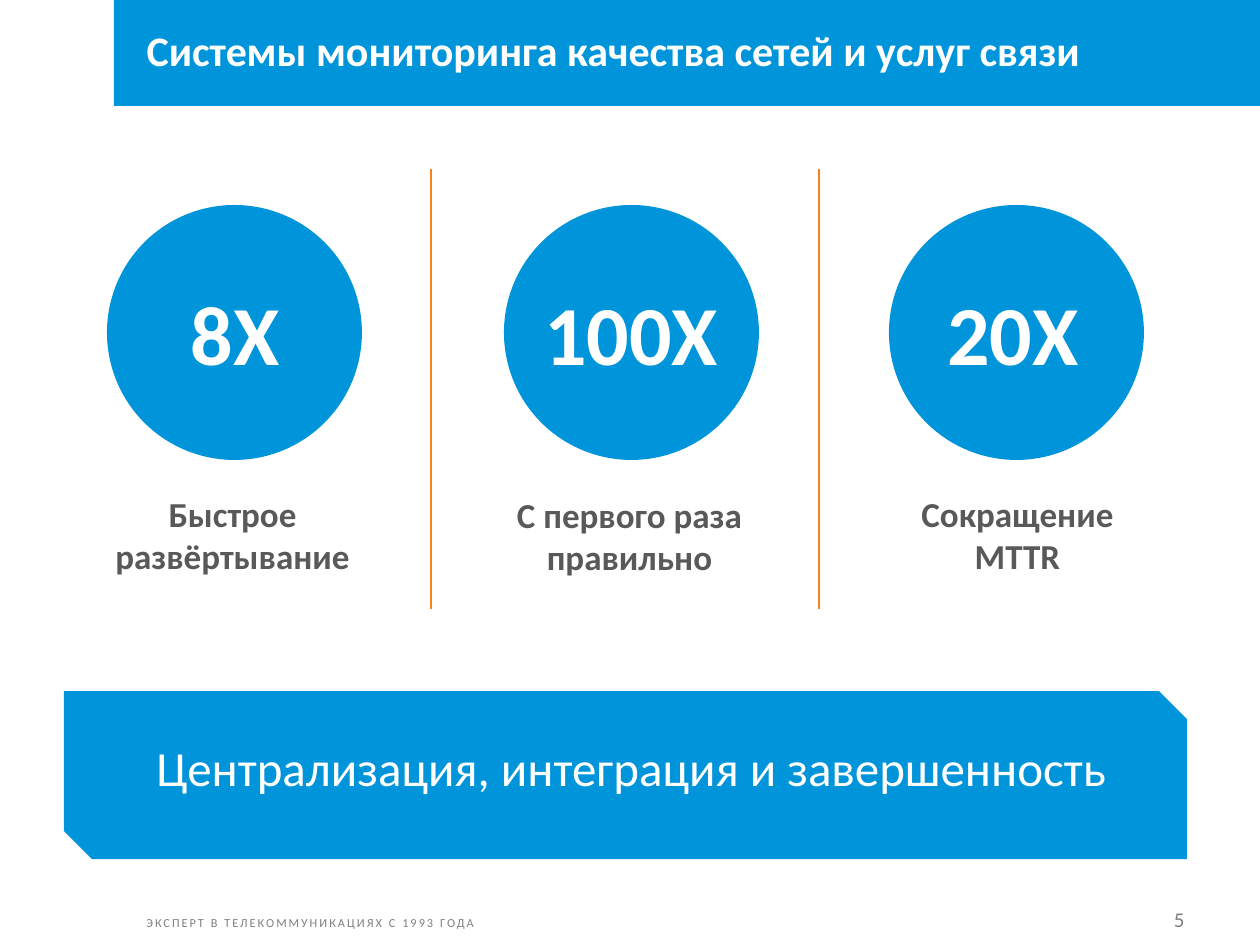
from lxml.etree import SubElement
from pptx import Presentation
from pptx.dml.color import RGBColor
from pptx.enum.shapes import MSO_CONNECTOR, MSO_SHAPE
from pptx.enum.text import MSO_ANCHOR, PP_ALIGN
from pptx.oxml.ns import qn
from pptx.util import Emu, Pt

BLUE, ORANGE, WHITE, GREY, DARK = "0095DA", "F5821E", "FFFFFF", "808080", "595959"


def px(n):
    return Emu(round(n * 914400 / 126))


def rgb(value):
    return RGBColor.from_string(value)


class Deck:
    """Holds the style and the current slide, with a method for each element."""

    font = "Calibri"

    def __init__(self, width, height):
        self.prs = Presentation()
        self.prs.slide_width, self.prs.slide_height = px(width), px(height)

    def add_slide(self):
        self.s = self.prs.slides.add_slide(self.prs.slide_layouts[5])

    def set_text(self, sp, text, size, color, bold=False, align=PP_ALIGN.LEFT,
                 anchor=MSO_ANCHOR.TOP, spacing=None):
        tf = sp.text_frame
        tf.word_wrap = True
        tf.vertical_anchor = anchor
        p = tf.paragraphs[0]
        p.text = text
        p.alignment = align
        for r in p.runs:
            for name, value in dict(name=self.font, size=Pt(size), bold=bold).items():
                setattr(r.font, name, value)
            r.font.color.rgb = rgb(color)
            if spacing:
                r.font._element.set("spc", str(spacing))

    def title(self, box, text, size, color):
        sp = self.s.shapes.title
        for name, value in zip(("left", "top", "width", "height"), box):
            setattr(sp, name, px(value))
        self.set_text(sp, text, size, color, bold=True)
        self.s.shapes.element.append(sp.element)

    def text(self, box, text, size, color, **style):
        sp = self.s.shapes.add_textbox(*map(px, box))
        self.set_text(sp, text, size, color, **style)

    def shape(self, kind, box, color):
        sp = self.s.shapes.add_shape(kind, *map(px, box))
        sp.shadow.inherit = False
        sp.fill.solid()
        sp.fill.fore_color.rgb = rgb(color)
        sp.line.fill.background()

    def divider(self, x, top, bottom, color):
        c = self.s.shapes.add_connector(MSO_CONNECTOR.STRAIGHT, px(x), px(top), px(x), px(bottom))
        c.line.color.rgb = rgb(color)
        c.line.width = Pt(1)
        SubElement(c.element.spPr, qn("a:effectLst"))


def main():
    d = Deck(1260, 945)
    d.add_slide()
    d.shape(MSO_SHAPE.RECTANGLE, (114, 0, 1146, 106), BLUE)
    d.title((134, 18, 1053, 78), "Системы мониторинга качества сетей и услуг связи", 24, WHITE)

    center, top, middle = PP_ALIGN.CENTER, MSO_ANCHOR.TOP, MSO_ANCHOR.MIDDLE
    benefits = [
        (107, "8X", (177, 116), "Быстрое развёртывание", (54, 486, 357, 115), top),
        (504, "100X", (523, 217), "С первого раза правильно", (481, 478, 297, 115), middle),
        (889, "20X", (930, 166), "Сокращение\vMTTR", (858, 486, 319, 115), top),
    ]
    for left, factor, (x, width), label, box, anchor in benefits:
        d.shape(MSO_SHAPE.OVAL, (left, 205, 255, 255), BLUE)
        d.text((x, 275, width, 115), factor, 48, WHITE, bold=True, align=center)
        d.text(box, label, 20, DARK, bold=True, align=center, anchor=anchor)
    for x in (431, 819):
        d.divider(x, 169, 609, ORANGE)

    d.shape(MSO_SHAPE.SNIP_2_DIAG_RECTANGLE, (64, 691, 1123, 168), BLUE)
    d.text((144, 731, 992, 72), "Централизация, интеграция и завершенность", 28, WHITE)

    bottom = MSO_ANCHOR.BOTTOM
    d.text((134, 908, 892, 28), "ЭКСПЕРТ В ТЕЛЕКОММУНИКАЦИЯХ С 1993 ГОДА", 7, GREY,
           anchor=bottom, spacing=120)
    d.text((1106, 888, 91, 50), "5", 12, GREY, align=PP_ALIGN.RIGHT, anchor=bottom)
    d.prs.save("out.pptx")


if __name__ == "__main__":
    main()
